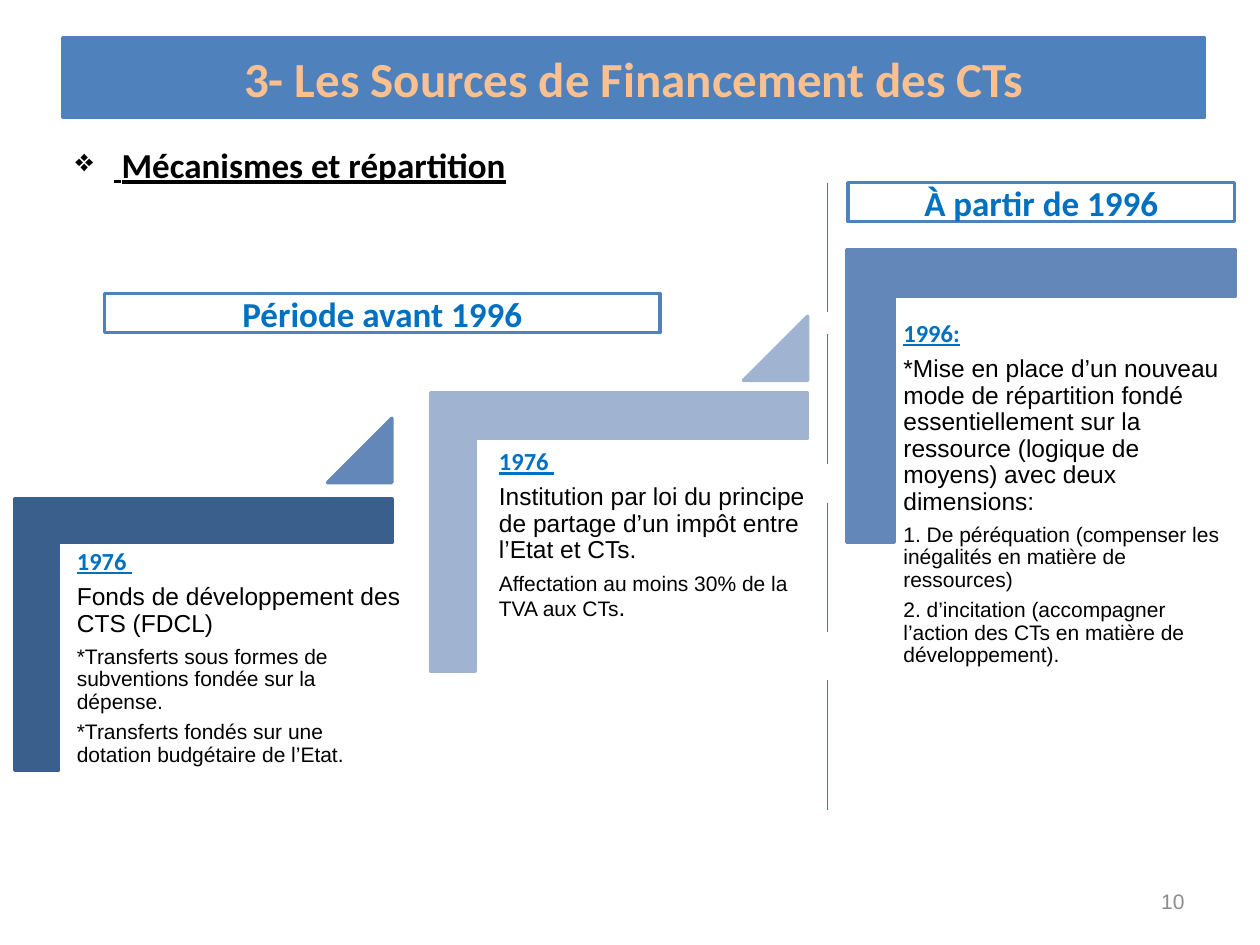
"""Build the slide on the sources of local-authority funding before and after 1996."""
from lxml.etree import SubElement
from pptx import Presentation
from pptx.dml.color import RGBColor
from pptx.enum.shapes import MSO_CONNECTOR, MSO_SHAPE
from pptx.enum.text import MSO_ANCHOR, PP_ALIGN
from pptx.oxml.ns import qn
from pptx.util import Inches, Pt

COLORS = {
    "blue": "4F81BD", "dark": "3A5F8C", "medium": "6387B9", "light": "A0B3D1",
    "peach": "FAC090", "heading": "0070C0", "black": "000000", "white": "FFFFFF",
    "gray": "8C8C8C", "red": "BF4C48",
}
TITLE = "3- Les Sources de Financement des CTs"
SUBTITLE = ((" ", 18), ("Mécanismes et répartition", 20))
PAGE_NUMBER = "10"
PERIODS = [
    ("Période avant 1996", (0.83, 2.33, 4.41, 0.31)),
    ("À partir de 1996", (6.73, 1.45, 3.07, 0.31)),
]
STEPS = [
    {
        "color": "dark", "corner": (0.12, 3.96, 2.99, 2.15), "text": (0.55, 4.3, 2.69, 2.36),
        "triangle": ("medium", 3.32), "heading": "1976 ",
        "body": [
            [("Fonds de développement des CTS (FDCL)", 14)],
            [("*Transferts sous formes de subventions fondée sur la dépense.", 12)],
            [("*Transferts fondés sur une dotation budgétaire de l’Etat.", 12)],
        ],
    },
    {
        "color": "light", "corner": (3.42, 3.12, 2.99, 2.21), "text": (3.9, 3.51, 2.69, 2.36),
        "triangle": ("light", 2.51), "heading": "1976 ",
        "body": [
            [("Institution par loi du principe de partage d’un impôt entre l’Etat et CTs.", 14)],
            [("Affectation au moins 30% de la TVA aux CTs", 12), (".", 14)],
        ],
    },
    {
        "color": "medium", "corner": (6.72, 1.98, 3.08, 2.32), "text": (7.11, 2.49, 2.69, 2.89),
        "triangle": None, "heading": "1996:",
        "body": [
            [("*Mise en place d’un nouveau mode de répartition fondé essentiellement sur "
              "la ressource (logique de moyens) avec deux dimensions:", 14)],
            [("1. De péréquation (compenser les inégalités en matière de ressources)", 12)],
            [("2. d’incitation (accompagner l’action des CTs en matière de développement).", 12)],
        ],
    },
]
TRIANGLE_SIZE = 0.51
DIVIDER_LEFT, DIVIDER_LENGTH = 6.57, 1.03
DIVIDER_TOPS = (1.45, 2.65, 3.99, 5.4)


def color(name):
    return RGBColor.from_string(COLORS[name])


def inches(box):
    return [Inches(length) for length in box]


def paint(shape, fill, line):
    shape.fill.solid()
    shape.fill.fore_color.rgb = color(fill)
    shape.line.color.rgb = color(line)
    shape.line.width = Pt(2)


def add_shape(slide, kind, box, fill, line):
    shape = slide.shapes.add_shape(kind, *inches(box))
    shape.shadow.inherit = False
    paint(shape, fill, line)
    return shape


def add_text_box(slide, box):
    text_box = slide.shapes.add_textbox(*inches(box))
    text_box.text_frame.word_wrap = True
    return text_box.text_frame


def format_run(run, size, font, tint, bold=False, underline=False):
    run.font.size = Pt(size)
    run.font.name = font
    run.font.color.rgb = color(tint)
    run.font.bold = bold
    run.font.underline = underline


def write_centered(shape, text, size, tint):
    frame = shape.text_frame
    frame.text = text
    frame.word_wrap = True
    frame.vertical_anchor = MSO_ANCHOR.MIDDLE
    frame.paragraphs[0].alignment = PP_ALIGN.CENTER
    format_run(frame.paragraphs[0].runs[0], size, "Calibri", tint, bold=True)


def add_runs(paragraph, pieces, *style):
    for text, size in pieces:
        run = paragraph.add_run()
        run.text = text
        format_run(run, size, *style)


def add_title(slide):
    title = slide.shapes.title
    title.left, title.top, title.width, title.height = inches((0.5, 0.3, 9.06, 0.63))
    paint(title, "blue", "blue")
    write_centered(title, TITLE, 28, "peach")


def add_subtitle(slide):
    paragraph = add_text_box(slide, (0.02, 1.09, 9.06, 0.44)).paragraphs[0]
    add_runs(paragraph, SUBTITLE, "Calibri", "black", True, True)
    properties = paragraph._p.get_or_add_pPr()
    properties.set("marL", str(Inches(0.79)))
    properties.set("indent", str(Inches(-0.31)))
    SubElement(properties, qn("a:buChar")).set("char", "❖")


def add_step(slide, step):
    left, top, width, height = step["corner"]
    upright_box = (left + (width - height) / 2, top + (height - width) / 2, height, width)
    corner = add_shape(slide, MSO_SHAPE.CORNER, upright_box, step["color"], step["color"])
    corner.rotation = 90
    corner.adjustments[0] = corner.adjustments[1] = 0.161

    frame = add_text_box(slide, step["text"])
    frame.margin_left = frame.margin_right = Inches(0.06)
    frame.margin_top = frame.margin_bottom = Inches(0.06)
    add_runs(frame.paragraphs[0], [(step["heading"], 14)], "Calibri", "heading", True, True)
    for pieces in step["body"]:
        add_runs(frame.add_paragraph(), pieces, "Arial", "black")
    for paragraph in frame.paragraphs:
        paragraph.line_spacing = 0.9
        paragraph.space_after = Pt(0.35 * paragraph.runs[0].font.size.pt)

    if step["triangle"]:
        tint, triangle_top = step["triangle"]
        box = (left + width - TRIANGLE_SIZE, triangle_top, TRIANGLE_SIZE, TRIANGLE_SIZE)
        triangle = add_shape(slide, MSO_SHAPE.ISOSCELES_TRIANGLE, box, tint, tint)
        triangle.adjustments[0] = 1


def add_divider(slide, top):
    ends = inches((DIVIDER_LEFT, top, DIVIDER_LEFT, top + DIVIDER_LENGTH))
    connector = slide.shapes.add_connector(MSO_CONNECTOR.STRAIGHT, *ends)
    connector.line.color.rgb = color("red")
    connector.line.width = Pt(0.75)
    SubElement(connector._element.spPr, qn("a:effectLst"))


def add_page_number(slide):
    frame = add_text_box(slide, (7.17, 6.95, 2.33, 0.4))
    frame.text = PAGE_NUMBER
    frame.vertical_anchor = MSO_ANCHOR.MIDDLE
    frame.paragraphs[0].alignment = PP_ALIGN.RIGHT
    format_run(frame.paragraphs[0].runs[0], 12, "Arial", "gray")


def main():
    presentation = Presentation()
    presentation.slide_width, presentation.slide_height = inches((10, 7.5))
    slide = presentation.slides.add_slide(presentation.slide_layouts[5])
    add_title(slide)
    for step in STEPS:
        add_step(slide, step)
    add_subtitle(slide)
    add_page_number(slide)
    for label, box in PERIODS:
        write_centered(add_shape(slide, MSO_SHAPE.RECTANGLE, box, "white", "blue"),
                       label, 20, "heading")
    for top in DIVIDER_TOPS:
        add_divider(slide, top)
    presentation.save("out.pptx")


if __name__ == "__main__":
    main()
